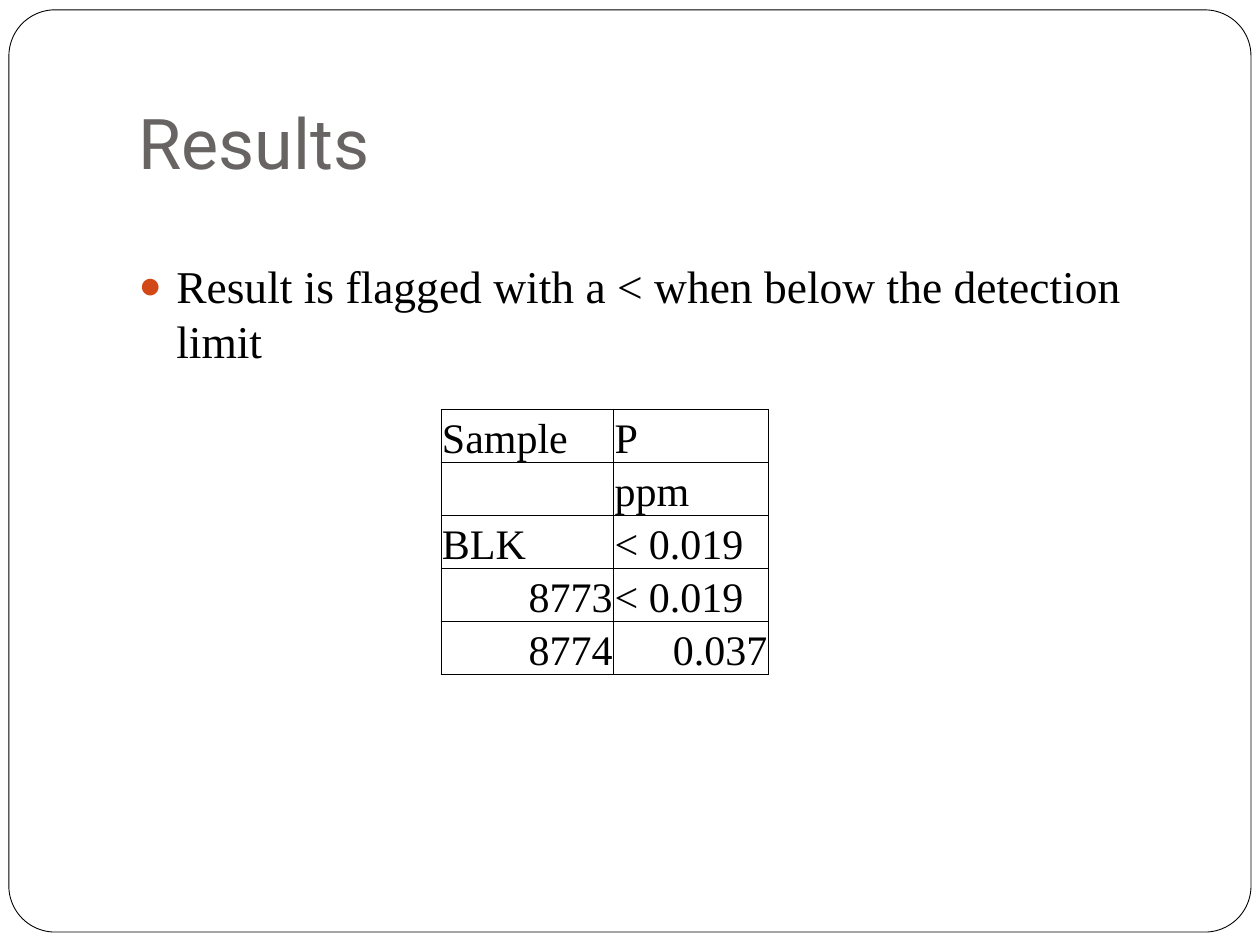
import pptx
import pptx.util
import pptx.dml.color
import pptx.enum.shapes
import pptx.enum.text
import pptx.oxml
import pptx.oxml.ns
import lxml.etree

Cm = pptx.util.Cm
Pt = pptx.util.Pt
ANCHOR = pptx.enum.text.MSO_ANCHOR
ALIGN = pptx.enum.text.PP_ALIGN

BLACK, WHITE, GREY, ORANGE = "000000", "FFFFFF", "696464", "D34817"
SERIF = "Times New Roman"
ROWS = [("Sample", "P"), ("", "ppm"), ("BLK", "< 0.019"),
        ("8773", "< 0.019"), ("8774", "0.037")]


def color(value):
    return pptx.dml.color.RGBColor.from_string(value)


def add_element(parent, tag, **attributes):
    element = lxml.etree.SubElement(parent, pptx.oxml.ns.qn(tag))
    for name, value in attributes.items():
        element.set(name, str(value))
    return element


def format_text(paragraph, size, font_name, font_color):
    for run in paragraph.runs:
        run.font.size = Pt(size)
        run.font.name = font_name
        run.font.color.rgb = color(font_color)


def place(shape, left, top, width, height):
    shape.left, shape.top = Cm(left), Cm(top)
    shape.width, shape.height = Cm(width), Cm(height)


def add_frame(slide, left, top, width, height):
    frame = slide.shapes.add_shape(
        pptx.enum.shapes.MSO_SHAPE.ROUNDED_RECTANGLE,
        Cm(left), Cm(top), Cm(width), Cm(height))
    frame.adjustments[0] = 0.05
    frame.shadow.inherit = False
    frame.fill.solid()
    frame.fill.fore_color.rgb = color(WHITE)
    frame.line.color.rgb = color(BLACK)
    frame.line.width = Pt(0.5)
    # Behind the placeholders
    slide.shapes._spTree.insert(2, frame._element)


def fill_title(slide, left, top, width, height):
    title = slide.shapes.title
    place(title, left, top, width, height)
    text_frame = title.text_frame
    text_frame.text = "Results"
    text_frame.vertical_anchor = ANCHOR.BOTTOM
    text_frame.margin_bottom = Cm(0.25)
    paragraph = text_frame.paragraphs[0]
    paragraph.alignment = ALIGN.LEFT
    format_text(paragraph, 40, "Roboto", GREY)


def fill_body(slide, left, top, width, height):
    body = slide.placeholders[1]
    place(body, left, top, width, height)
    body.text_frame.text = "Result is flagged with a < when below the detection limit"
    paragraph = body.text_frame.paragraphs[0]
    paragraph.space_before = Pt(5.8)
    format_text(paragraph, 26, SERIF, BLACK)
    # Hanging round bullet
    properties = paragraph._p.get_or_add_pPr()
    properties.set("marL", str(Cm(0.76)))
    properties.set("indent", str(-Cm(0.76)))
    add_element(add_element(properties, "a:buClr"), "a:srgbClr", val=ORANGE)
    add_element(properties, "a:buSzPct", val=85000)
    add_element(properties, "a:buChar", char="●")


def add_borders(cell):
    properties = cell._tc.get_or_add_tcPr()
    for position, side in enumerate(("a:lnL", "a:lnR", "a:lnT", "a:lnB")):
        line = add_element(properties, side, w=Pt(0.5))
        add_element(add_element(line, "a:solidFill"), "a:srgbClr", val=BLACK)
        properties.insert(position, line)


def add_results_table(slide, left, top, column_widths, row_height):
    table = slide.shapes.add_table(
        len(ROWS), len(column_widths), Cm(left), Cm(top),
        Cm(sum(column_widths)), Cm(row_height * len(ROWS))).table
    table.first_row = table.horz_banding = False
    for column, width in zip(table.columns, column_widths):
        column.width = Cm(width)
    for row, texts in zip(table.rows, ROWS):
        row.height = Cm(row_height)
        for cell, text in zip(row.cells, texts):
            cell.fill.background()
            add_borders(cell)
            cell.vertical_anchor = ANCHOR.BOTTOM
            cell.margin_left = cell.margin_right = cell.margin_top = Cm(0.02)
            cell.margin_bottom = 0
            if text:
                cell.text_frame.text = text
            paragraph = cell.text_frame.paragraphs[0]
            # Plain numbers align right, words and flagged values left
            is_number = text.replace(".", "").isdigit()
            paragraph.alignment = ALIGN.RIGHT if is_number else ALIGN.LEFT
            format_text(paragraph, 24, SERIF, BLACK)


def main():
    presentation = pptx.Presentation()
    presentation.slide_width, presentation.slide_height = Cm(25.4), Cm(19.05)
    slide = presentation.slides.add_slide(presentation.slide_layouts[1])
    add_frame(slide, 0.18, 0.2, 25.04, 18.59)
    fill_title(slide, 2.54, 0.76, 21.59, 3.18)
    fill_body(slide, 2.54, 5.08, 21.59, 11.63)
    add_results_table(slide, 8.89, 8.25, (3.48, 3.12), 1.07)
    presentation.save("out.pptx")


if __name__ == "__main__":
    main()
